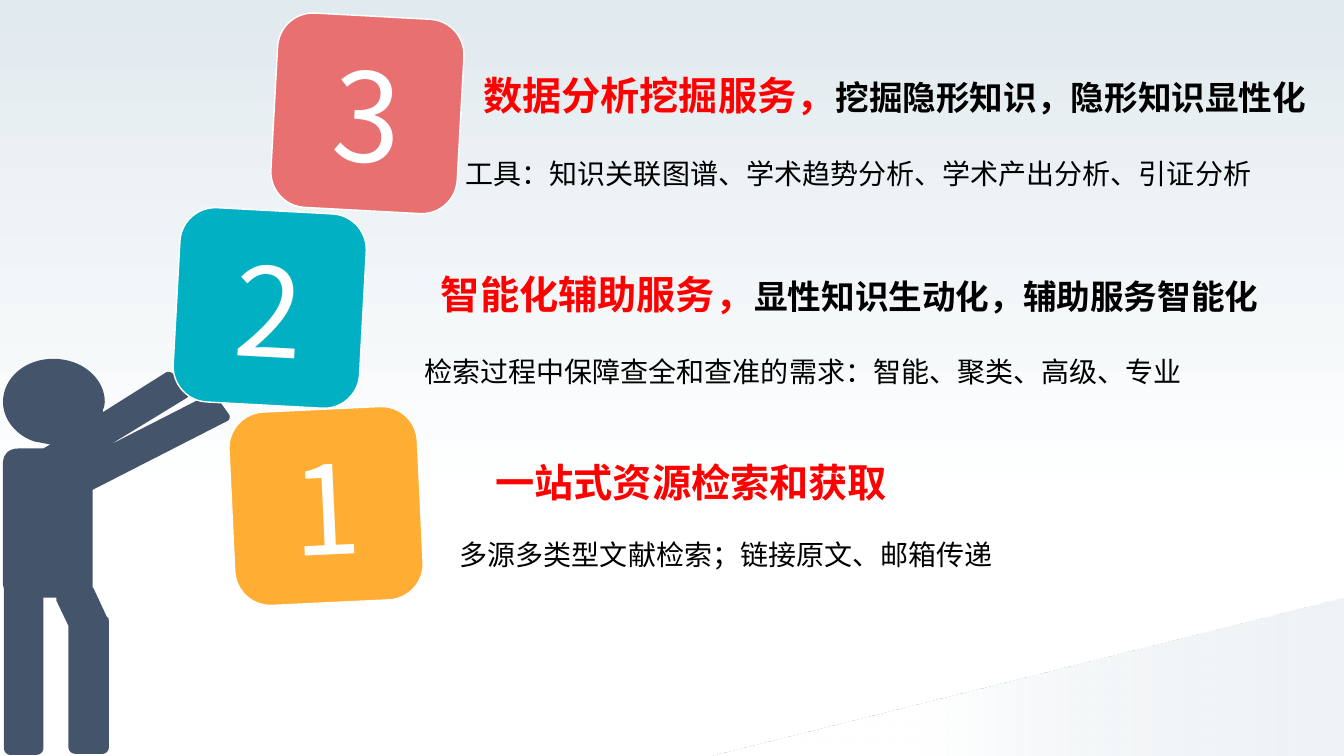
from lxml import etree
from pptx import Presentation, util as u
from pptx.dml.color import RGBColor
from pptx.enum import shapes, text
from pptx.oxml.ns import qn

THEME = dict(
    font="Noto Sans CJK SC", mist="E1EAEF", white="FFFFFF", black="000000",
    red="FF0000", navy="44546A", amber="FFAD33", teal="01B0C2", coral="E87070",
    number=88, title=28, subtitle=24, detail=20,
)

prs = Presentation()
prs.slide_width, prs.slide_height = u.Inches(13.33), u.Inches(7.5)
s = prs.slides.add_slide(prs.slide_layouts[6])
col, row = prs.slide_width / 100, prs.slide_height / 100


def grid(x, y, w, h):
    return round(x * col), round(y * row), round(w * col), round(h * row)


def add_run(p, words, size, color, bold=False):
    r = p.add_run()
    r.text = words
    r.font.name = THEME["font"]
    r.font.size = u.Pt(THEME[size])
    r.font.bold = bold
    r.font.color.rgb = RGBColor.from_string(THEME[color])
    ea = etree.SubElement(r.font._element, qn("a:ea"))
    ea.set("typeface", THEME["font"])


backdrops = [
    (shapes.MSO_SHAPE.RECTANGLE, (0, 0, 100, 100), 270, 100),
    (shapes.MSO_SHAPE.ISOSCELES_TRIANGLE, (52.36, 79.07, 47.79, 21.07), 180, 57),
]
for kind, box, angle, opacity in backdrops:
    sp = s.shapes.add_shape(kind, *grid(*box))
    sp.shadow.inherit = False
    sp.line.fill.background()
    if len(sp.adjustments):
        sp.adjustments[0] = 1
    sp.fill.gradient()
    sp.fill.gradient_angle = angle
    for stop, color, position in zip(sp.fill.gradient_stops, ("mist", "white"), (0, 0.67)):
        stop.color.rgb = RGBColor.from_string(THEME[color])
        stop.position = position
    if opacity < 100:
        first = sp._element.spPr.find(".//" + qn("a:srgbClr"))
        etree.SubElement(first, qn("a:alpha")).set("val", str(opacity * 1000))

start = (53, 356)
outline = [
    (81, 356, 104, 375, 104, 399), (104, 402, 103, 405, 102, 407), (102, 409),
    (164, 370), (166, 368, 170, 369, 172, 371), (186, 388),
    (188, 390, 188, 393, 185, 395), (108, 442), (206, 392),
    (209, 391, 213, 391, 215, 394), (227, 411), (229, 413, 228, 417, 225, 418),
    (92, 486), (92, 580), (92, 583), (93, 584), (106, 612), (106, 612),
    (108, 613, 108, 614, 108, 616), (108, 742), (108, 745, 105, 748, 102, 748),
    (75, 748), (71, 748, 68, 745, 68, 742), (68, 621), (56, 596), (56, 593),
    (43, 593), (43, 743), (43, 746, 40, 749, 36, 749), (10, 749),
    (7, 749, 4, 746, 4, 743), (4, 587), (4, 586), (4, 585),
    (3, 583, 3, 582, 3, 580), (3, 458), (3, 451, 9, 445, 18, 445), (43, 445),
    (50, 441), (34, 438), (16, 432, 3, 416, 3, 399), (3, 375, 25, 356, 53, 356),
]
builder = s.shapes.build_freeform(*start, scale=u.Inches(0.01))
for segment in outline:
    builder.add_line_segments(list(zip(segment[::2], segment[1::2])), close=False)
sp = builder.convert_to_shape()
sp.shadow.inherit = False
sp.fill.solid()
sp.fill.fore_color.rgb = RGBColor.from_string(THEME["navy"])
sp.line.fill.background()

contour = sp._element.spPr.find(".//" + qn("a:path"))
steps = iter(contour.findall(qn("a:lnTo")))
for segment in outline:
    first = next(steps)
    if len(segment) == 6:
        first.tag = qn("a:cubicBezTo")
        for extra in (next(steps), next(steps)):
            first.append(extra[0])
            contour.remove(extra)
etree.SubElement(contour, qn("a:close"))

levels = [
    ("1", "amber", -2.7, (17.25, 54.13, 14.03, 25.6),
     (30.61, 57.8, 41.64, 10), "一站式资源检索和获取", "",
     (34.21, 68.87, 57.76, 6.67), "多源多类型文献检索；链接原文、邮箱传递"),
    ("2", "teal", 3.1, (13.13, 27.87, 13.88, 25.73),
     (31.6, 32.87, 63.24, 10), "智能化辅助服务，", "显性知识生动化，辅助服务智能化",
     (31.58, 44.67, 67.37, 6.67), "检索过程中保障查全和查准的需求：智能、聚类、高级、专业"),
    ("3", "coral", 3.1, (20.4, 2.13, 13.88, 25.73),
     (35.58, 6.67, 61.97, 10), "数据分析挖掘服务，", "挖掘隐形知识，隐形知识显性化",
     (34.65, 18.47, 62.04, 5.73), "工具：知识关联图谱、学术趋势分析、学术产出分析、引证分析"),
]
for number, color, turn, card, title_box, title, subtitle, detail_box, detail in levels:
    sp = s.shapes.add_shape(shapes.MSO_SHAPE.ROUNDED_RECTANGLE, *grid(*card))
    sp.shadow.inherit = False
    sp.adjustments[0] = 0.19
    sp.rotation = turn
    sp.fill.solid()
    sp.fill.fore_color.rgb = RGBColor.from_string(THEME[color])
    sp.line.color.rgb = RGBColor.from_string(THEME["white"])
    sp.line.width = u.Pt(1)
    tf = sp.text_frame
    tf.vertical_anchor = text.MSO_ANCHOR.MIDDLE
    p = tf.paragraphs[0]
    p.alignment = text.PP_ALIGN.CENTER
    add_run(p, number, "number", "white")

    lines = [
        (title_box, text.MSO_ANCHOR.MIDDLE, text.MSO_AUTO_SIZE.NONE,
         text.PP_ALIGN.CENTER, 1.3,
         [(title, "title", "red", True), (subtitle, "subtitle", "black", True)]),
        (detail_box, text.MSO_ANCHOR.TOP, text.MSO_AUTO_SIZE.SHAPE_TO_FIT_TEXT,
         text.PP_ALIGN.JUSTIFY, 1.5,
         [(detail, "detail", "black", False)]),
    ]
    for box, anchor, fit, align, spacing, runs in lines:
        tf = s.shapes.add_textbox(*grid(*box)).text_frame
        tf.word_wrap = True
        tf.auto_size = fit
        tf.margin_left = tf.margin_top = tf.margin_right = tf.margin_bottom = 0
        tf.vertical_anchor = anchor
        p = tf.paragraphs[0]
        p.alignment = align
        p.line_spacing = spacing
        for words, size, ink, bold in runs:
            if words:
                add_run(p, words, size, ink, bold)

prs.save("out.pptx")
